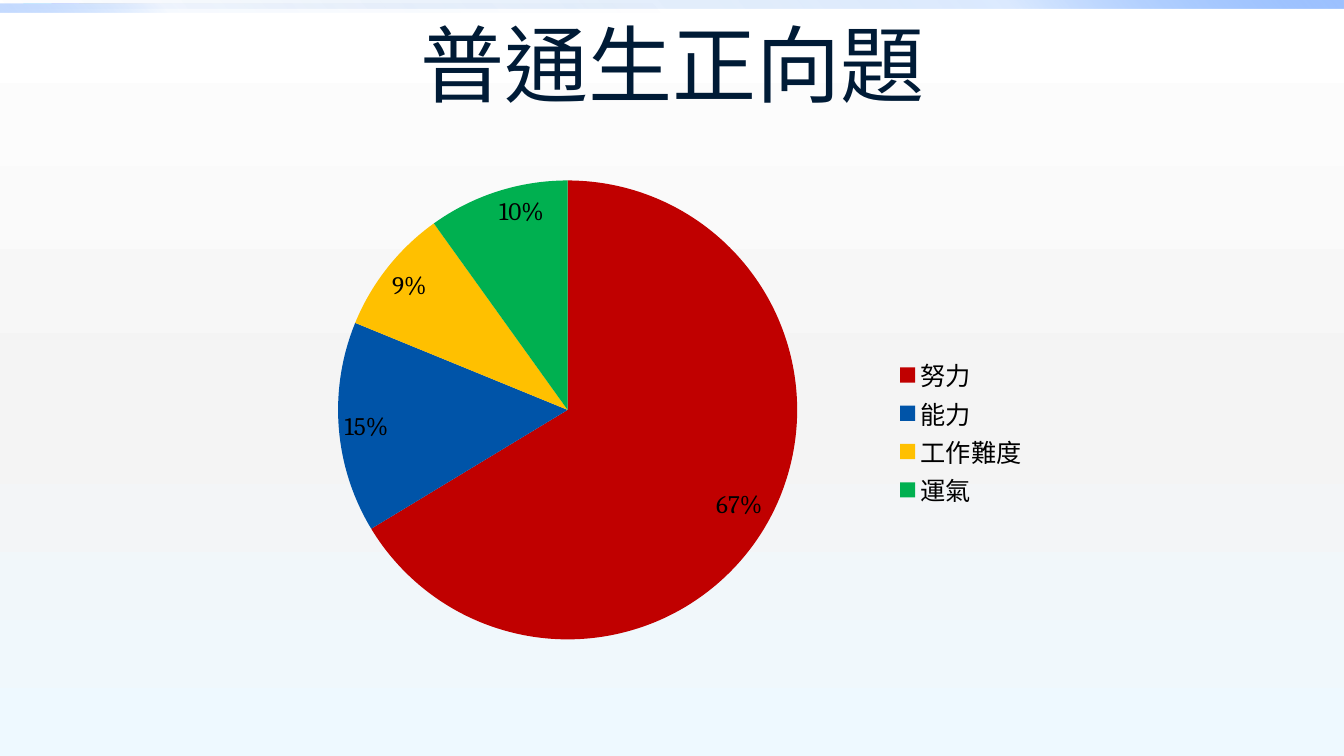
import pptx
import pptx.chart.data
import pptx.dml.color
import pptx.enum.chart
import pptx.enum.shapes
import pptx.enum.text
import pptx.oxml
import pptx.oxml.ns
import pptx.util

Inches = pptx.util.Inches
Pt = pptx.util.Pt

COLORS = {
    "title": "001B36", "text": "000000",
    "white": "FFFFFF", "grey": "F4F4F4", "ice": "EEF9FF",
    "deep": "0058B7", "mid": "4F95FF", "pale": "9EC2FF",
    "red": "C00000", "blue": "0054A8", "amber": "FFC000", "green": "00B050",
}
ANSWERS = [("努力", 67, "red"), ("能力", 15, "blue"),
           ("工作難度", 9, "amber"), ("運氣", 10, "green")]


def rgb(name):
    return pptx.dml.color.RGBColor.from_string(COLORS[name])


class Deck:
    title_font = "Noto Sans CJK SC"
    chart_font = "Cambria"

    def __init__(self):
        self.prs = pptx.Presentation()
        self.prs.slide_width = Inches(13.33)
        self.prs.slide_height = Inches(7.5)
        self.s = self.prs.slides.add_slide(self.prs.slide_layouts[5])

    def gradient(self, fill, element, stops, angle):
        """Fill with (position %, colour, opacity %) stops; angle is clockwise."""
        fill.gradient()
        grad = element.xpath(".//a:gradFill")[0]
        for child in list(grad):
            grad.remove(child)
        ns = pptx.oxml.ns.nsdecls("a")
        gs = "".join(
            f'<a:gs pos="{pos * 1000}"><a:srgbClr val="{COLORS[color]}">'
            f'<a:alpha val="{opacity * 1000}"/></a:srgbClr></a:gs>'
            for pos, color, opacity in stops)
        grad.append(pptx.oxml.parse_xml(f"<a:gsLst {ns}>{gs}</a:gsLst>"))
        grad.append(pptx.oxml.parse_xml(
            f'<a:lin {ns} ang="{angle * 60000}" scaled="0"/>'))

    def background(self, stops):
        self.gradient(self.s.background.fill, self.s.element, stops, 90)

    def bar(self, top, width, opacities, angle):
        """Add a fading band behind everything else."""
        sp = self.s.shapes.add_shape(
            pptx.enum.shapes.MSO_SHAPE.RECTANGLE,
            0, Inches(top), Inches(width), Inches(0.08))
        sp.shadow.inherit = False
        sp.line.fill.background()
        stops = zip((0, 75, 100), ("deep", "mid", "pale"), opacities)
        self.gradient(sp.fill, sp.element, stops, angle)
        self.s.shapes.element.insert(2, sp.element)

    def title(self, text):
        sp = self.s.shapes.title
        sp.left, sp.top = Inches(0.67), Inches(0)
        sp.width, sp.height = Inches(12), Inches(1.25)
        tf = sp.text_frame
        tf.auto_size = pptx.enum.text.MSO_AUTO_SIZE.NONE
        tf.vertical_anchor = pptx.enum.text.MSO_ANCHOR.MIDDLE
        p = tf.paragraphs[0]
        p.alignment = pptx.enum.text.PP_ALIGN.CENTER
        r = p.add_run()
        r.text = text
        r.font.size = Pt(60)
        r.font.name = self.title_font
        r.font.color.rgb = rgb("title")
        r.font.language_id = pptx.enum.lang.MSO_LANGUAGE_ID.TRADITIONAL_CHINESE
        ns = pptx.oxml.ns.nsdecls("a")
        r.font._element.find(pptx.oxml.ns.qn("a:latin")).addnext(
            pptx.oxml.parse_xml(f'<a:ea {ns} typeface="{self.title_font}"/>'))

    def layout(self, x, y, w, h, target=""):
        """Return a manual chart layout in fractions of the chart."""
        ns = pptx.oxml.ns.nsdecls("c")
        sizes = "".join(f'<c:{tag} val="{val}"/>'
                        for tag, val in zip("xywh", (x, y, w, h)))
        return pptx.oxml.parse_xml(
            f"<c:layout {ns}><c:manualLayout>{target}"
            '<c:xMode val="edge"/><c:yMode val="edge"/>'
            f"{sizes}</c:manualLayout></c:layout>")

    def pie(self, answers):
        data = pptx.chart.data.CategoryChartData()
        data.categories = [name for name, _, _ in answers]
        data.add_series("Series 1", [val for _, val, _ in answers])
        chart = self.s.shapes.add_chart(
            pptx.enum.chart.XL_CHART_TYPE.PIE, Inches(0.59), Inches(1.79),
            Inches(12), Inches(4.95), data).chart
        chart.has_title = False
        chart.font.name = self.chart_font
        chart.font.size = Pt(18)
        chart.font.color.rgb = rgb("text")
        plot = chart.plots[0]
        plot.vary_by_categories = True
        for i, (_, _, color) in enumerate(answers):
            fill = plot.series[0].points[i].format.fill
            fill.solid()
            fill.fore_color.rgb = rgb(color)
        plot.has_data_labels = True
        labels = plot.data_labels
        labels.show_value = True
        labels.show_percentage = False
        labels.number_format = '0"%"'
        labels.number_format_is_linked = False
        labels.position = pptx.enum.chart.XL_LABEL_POSITION.INSIDE_END
        chart.has_legend = True
        chart.legend.position = pptx.enum.chart.XL_LEGEND_POSITION.RIGHT
        chart.legend.include_in_layout = False

        area = chart.element.xpath(".//c:plotArea")[0]
        legend = chart.element.xpath(".//c:legend")[0]
        for old in area.xpath("./c:layout") + legend.xpath("./c:layout"):
            old.getparent().remove(old)
        area.insert(0, self.layout(0.23, 0, 0.38, 0.92,
                                   '<c:layoutTarget val="inner"/>'))
        legend.xpath("./c:legendPos")[0].addnext(
            self.layout(0.68, 0.35, 0.13, 0.31))


def main():
    deck = Deck()
    deck.background([(0, "white", 100), (55, "grey", 100), (100, "ice", 100)])
    deck.bar(0.04, 6.67, (0, 5, 60), 135)
    deck.bar(0, 13.33, (0, 20, 100), 315)
    deck.title("普通生正向題")
    deck.pie(ANSWERS)
    deck.prs.save("out.pptx")


if __name__ == "__main__":
    import pptx.enum.lang
    main()
